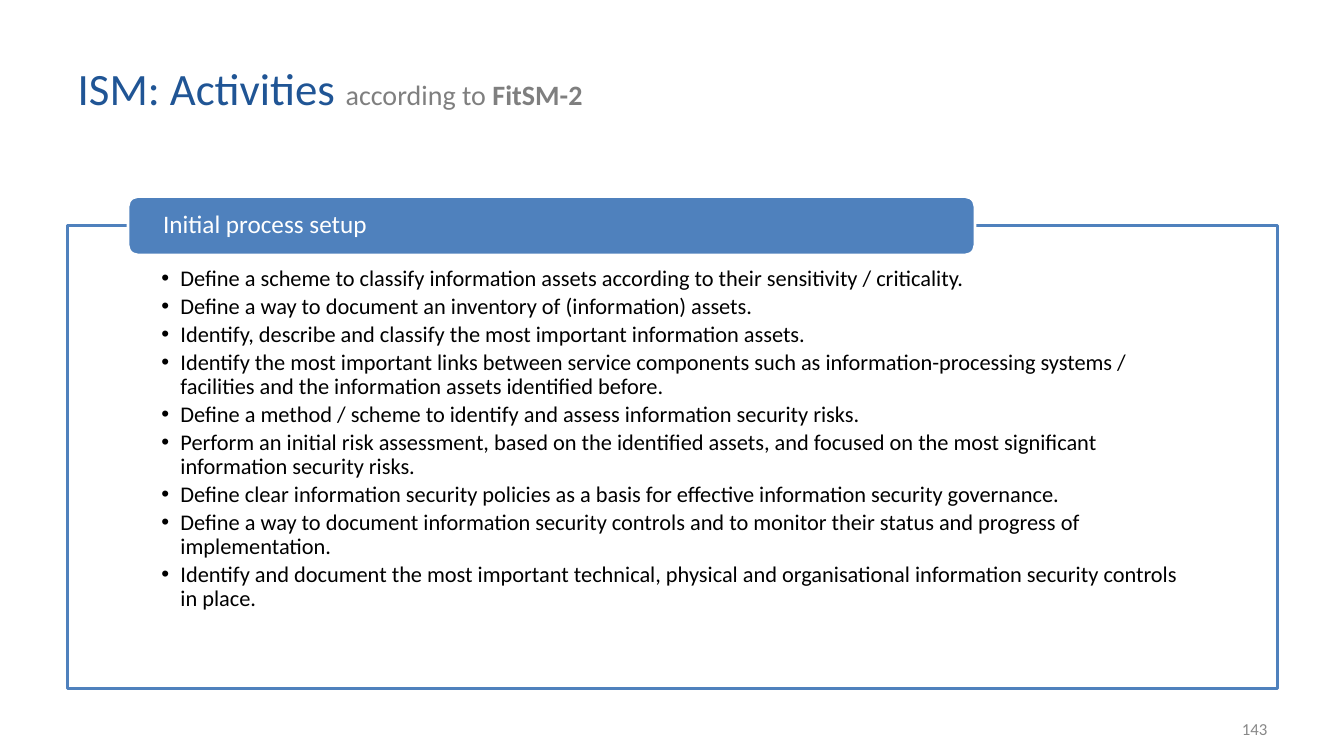
from dataclasses import dataclass

from lxml import etree
from pptx import Presentation
from pptx import util as u
from pptx.dml.color import RGBColor
from pptx.enum import shapes, text
from pptx.oxml.ns import qn
from pptx.shapes.autoshape import Shape
from pptx.slide import Slide
from pptx.text.text import TextFrame, _Paragraph


@dataclass(frozen=True)
class Theme:
    font: str = "Calibri"
    title: str = "205595"
    muted: str = "7F7F7F"
    number: str = "888888"
    accent: str = "4F81BD"
    white: str = "FFFFFF"
    black: str = "000000"
    title_size: int = 32
    subtitle_size: int = 20
    heading_size: int = 18
    activity_size: int = 16
    number_size: int = 12
    line_width: int = 2


@dataclass(frozen=True)
class Box:
    left: float
    top: float
    width: float
    height: float

    def lengths(self) -> tuple[u.Length, ...]:
        return tuple(map(u.Inches, (self.left, self.top, self.width, self.height)))


@dataclass(frozen=True)
class Words:
    content: str
    size: int
    color: str
    bold: bool = False


THEME = Theme()
TITLE_BOX = Box(0.67, 0.3, 9.9, 1.14)
SETUP_BOX = Box(0.67, 2.24, 12, 4.59)
HEADING_BOX = Box(1.27, 1.95, 8.4, 0.58)
NUMBER_BOX = Box(9.56, 7.03, 3.11, 0.4)
BULLET_INDENT = 0.19

TITLE = [
    Words("ISM: Activities ", THEME.title_size, THEME.title),
    Words("according to ", THEME.subtitle_size, THEME.muted),
    Words("FitSM-2", THEME.subtitle_size, THEME.muted, True),
]
ACTIVITIES = [
    "Define a scheme to classify information assets according to their sensitivity / criticality.",
    "Define a way to document an inventory of (information) assets.",
    "Identify, describe and classify the most important information assets.",
    "Identify the most important links between service components such as "
    "information-processing systems / facilities and the information assets identified before.",
    "Define a method / scheme to identify and assess information security risks.",
    "Perform an initial risk assessment, based on the identified assets, and focused on "
    "the most significant information security risks.",
    "Define clear information security policies as a basis for effective information "
    "security governance.",
    "Define a way to document information security controls and to monitor their status "
    "and progress of implementation.",
    "Identify and document the most important technical, physical and organisational "
    "information security controls in place.",
]


def place(shape: Shape, box: Box) -> None:
    shape.left, shape.top, shape.width, shape.height = box.lengths()


def write(paragraph: _Paragraph, words: Words) -> None:
    run = paragraph.add_run()
    run.text = words.content
    run.font.name = THEME.font
    run.font.size = u.Pt(words.size)
    run.font.bold = words.bold
    run.font.color.rgb = RGBColor.from_string(words.color)


def set_frame(frame: TextFrame, anchor: text.MSO_ANCHOR,
              left: float = 0.1, top: float = 0.05,
              right: float = 0.1, bottom: float = 0.05) -> None:
    frame.word_wrap = True
    frame.auto_size = text.MSO_AUTO_SIZE.NONE
    frame.vertical_anchor = anchor
    frame.margin_left, frame.margin_top = u.Inches(left), u.Inches(top)
    frame.margin_right, frame.margin_bottom = u.Inches(right), u.Inches(bottom)


def add_panel(slide: Slide, kind: shapes.MSO_SHAPE, box: Box, fill: str, line: str) -> Shape:
    panel = slide.shapes.add_shape(kind, *box.lengths())
    panel.shadow.inherit = False
    panel.fill.solid()
    panel.fill.fore_color.rgb = RGBColor.from_string(fill)
    panel.line.color.rgb = RGBColor.from_string(line)
    panel.line.width = u.Pt(THEME.line_width)
    return panel


def add_bullet(paragraph: _Paragraph) -> None:
    properties = paragraph._p.get_or_add_pPr()
    properties.set("marL", str(u.Inches(BULLET_INDENT)))
    properties.set("indent", str(-u.Inches(BULLET_INDENT)))
    bullet_color = etree.SubElement(properties, qn("a:buClr"))
    etree.SubElement(bullet_color, qn("a:srgbClr"), val=THEME.black)
    etree.SubElement(properties, qn("a:buChar"), char="•")


def fill_title(title: Shape) -> None:
    place(title, TITLE_BOX)
    set_frame(title.text_frame, text.MSO_ANCHOR.MIDDLE)
    paragraph = title.text_frame.paragraphs[0]
    paragraph.alignment = text.PP_ALIGN.LEFT
    for words in TITLE:
        write(paragraph, words)


def fill_activities(activities: Shape) -> None:
    place(activities, SETUP_BOX)
    frame = activities.text_frame
    set_frame(frame, text.MSO_ANCHOR.TOP, 0.93, 0.41, 0.93, 0.14)
    for index, activity in enumerate(ACTIVITIES):
        paragraph = frame.add_paragraph() if index else frame.paragraphs[0]
        add_bullet(paragraph)
        paragraph.level = 1
        paragraph.line_spacing = 0.9
        paragraph.space_before = u.Pt(2.7 if index else 0)
        write(paragraph, Words(activity, THEME.activity_size, THEME.black))


def add_setup_frame(slide: Slide) -> Shape:
    setup_frame = add_panel(slide, shapes.MSO_SHAPE.RECTANGLE, SETUP_BOX,
                            THEME.white, THEME.accent)
    fill_color = setup_frame.element.spPr.find(qn("a:solidFill"))[0]
    etree.SubElement(fill_color, qn("a:alpha"), val="90000")
    return setup_frame


def add_heading(slide: Slide) -> None:
    heading = add_panel(slide, shapes.MSO_SHAPE.ROUNDED_RECTANGLE, HEADING_BOX,
                        THEME.accent, THEME.white)
    set_frame(heading.text_frame, text.MSO_ANCHOR.MIDDLE, 0.32, 0, 0.32, 0)
    paragraph = heading.text_frame.paragraphs[0]
    paragraph.alignment = text.PP_ALIGN.LEFT
    paragraph.line_spacing = 0.9
    write(paragraph, Words("Initial process setup", THEME.heading_size, THEME.white))


def add_page_number(slide: Slide) -> None:
    page_number = slide.shapes.add_textbox(*NUMBER_BOX.lengths())
    set_frame(page_number.text_frame, text.MSO_ANCHOR.MIDDLE)
    paragraph = page_number.text_frame.paragraphs[0]
    paragraph.alignment = text.PP_ALIGN.RIGHT
    write(paragraph, Words("143", THEME.number_size, THEME.number))


def main() -> None:
    deck = Presentation()
    deck.slide_width, deck.slide_height = u.Inches(13.33), u.Inches(7.5)
    slide = deck.slides.add_slide(deck.slide_layouts[1])
    activities = slide.placeholders[1]
    fill_title(slide.shapes.title)
    setup_frame = add_setup_frame(slide)
    fill_activities(activities)
    setup_frame.element.addnext(activities.element)
    add_heading(slide)
    add_page_number(slide)
    deck.save("out.pptx")


if __name__ == "__main__":
    main()
